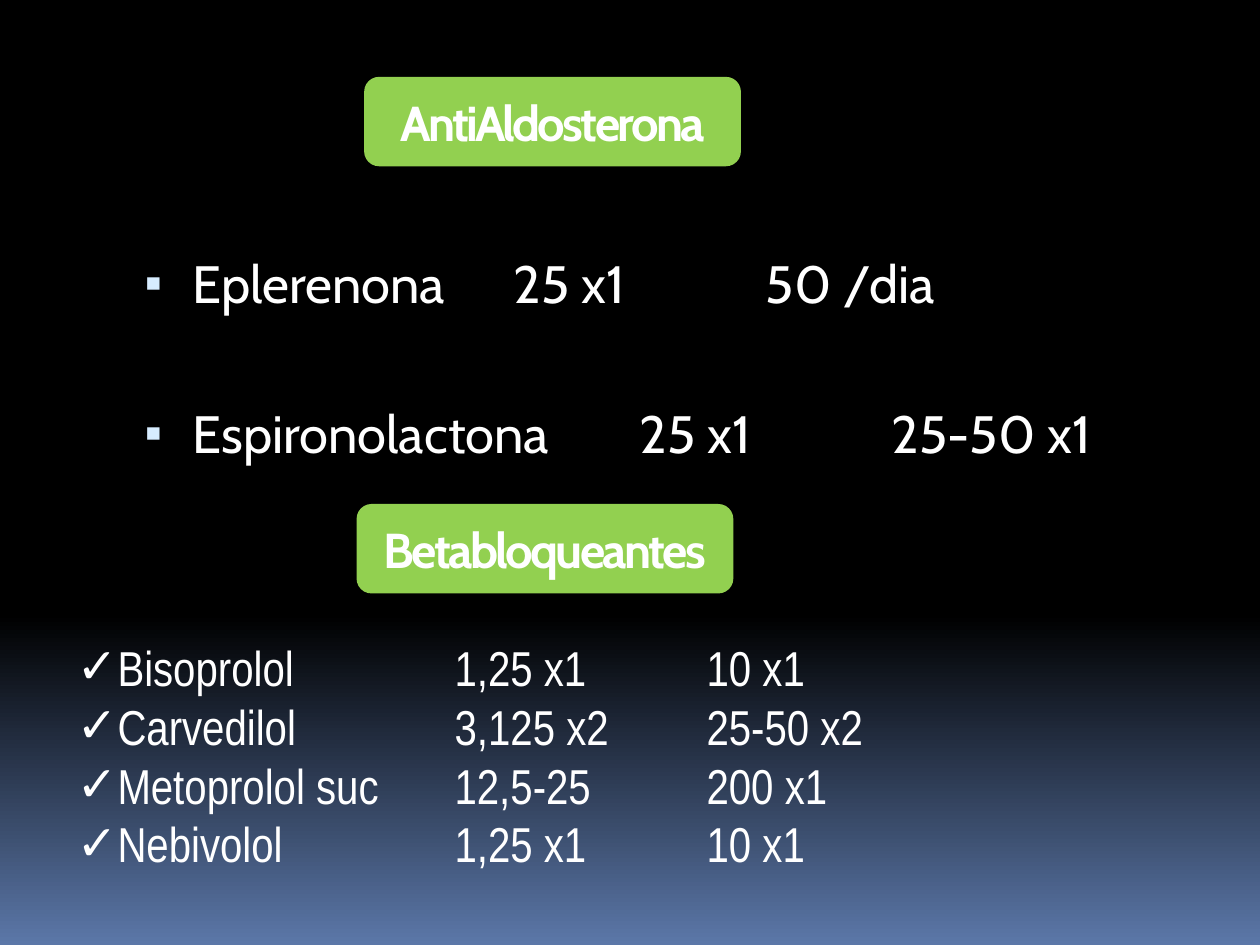
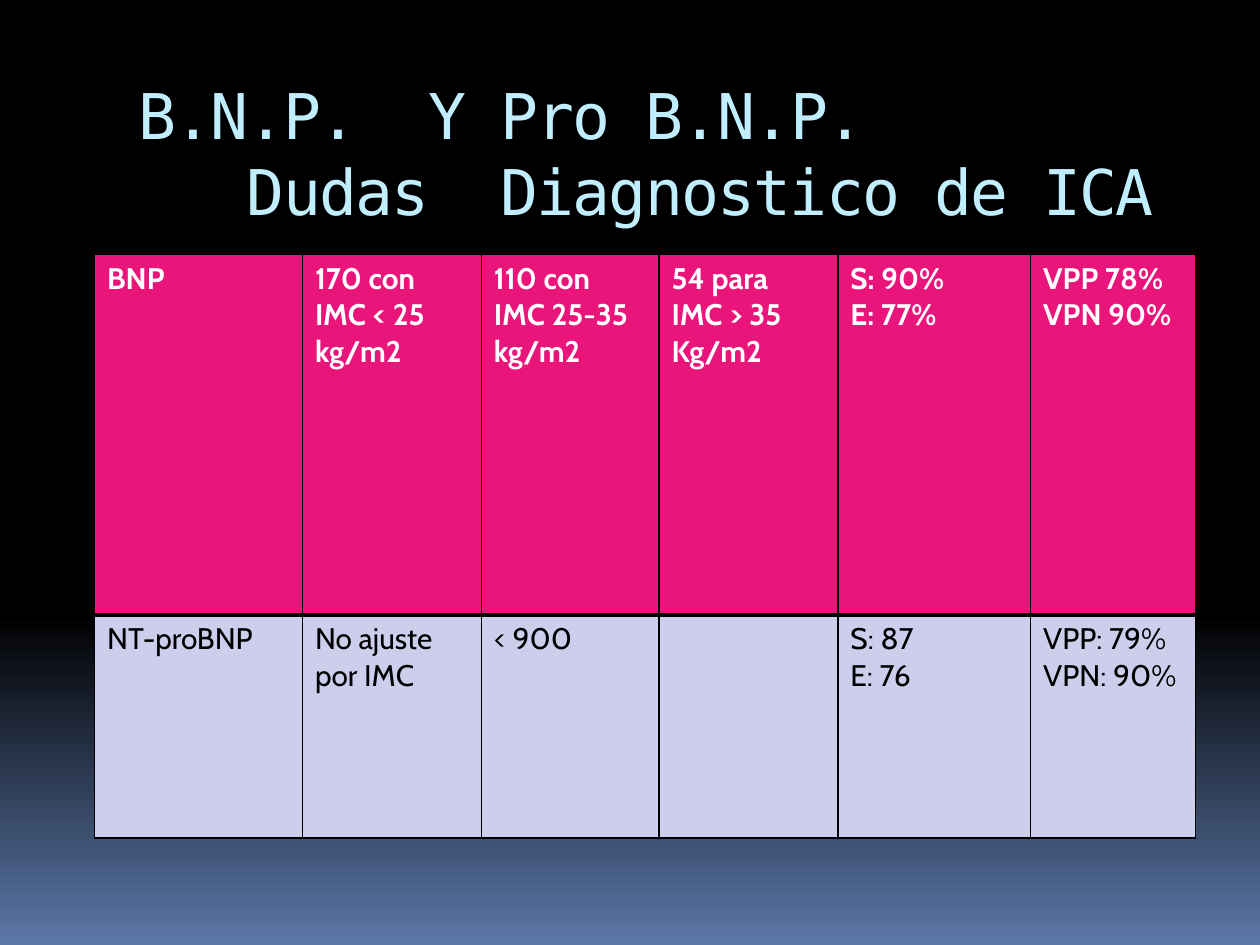
from pptx import Presentation
from pptx.dml.color import RGBColor
from pptx.enum.shapes import MSO_SHAPE
from pptx.enum.text import MSO_ANCHOR, MSO_AUTO_SIZE, PP_ALIGN
from pptx.oxml import parse_xml
from pptx.oxml.ns import nsdecls
from pptx.util import Inches, Pt

ROUNDED = MSO_SHAPE.ROUNDED_RECTANGLE
LEFT, CENTER = PP_ALIGN.LEFT, PP_ALIGN.CENTER
TOP, MIDDLE = MSO_ANCHOR.TOP, MSO_ANCHOR.MIDDLE
NO_FIT = MSO_AUTO_SIZE.NONE


class Theme:
    black = RGBColor(0x00, 0x00, 0x00)
    white = RGBColor(0xFF, 0xFF, 0xFF)
    dusk_blue = RGBColor(0x5B, 0x77, 0xA8)
    title_blue = RGBColor(0xC1, 0xEE, 0xFF)
    green = RGBColor(0x92, 0xD0, 0x50)
    pink = RGBColor(0xEA, 0x15, 0x7A)
    lilac = RGBColor(0xCD, 0xCD, 0xEC)
    bullet_blue = RGBColor(0xD6, 0xEC, 0xFF)
    body_font, list_font, title_font = "Cabin", "Arial Narrow", "DejaVu Sans Mono"
    bullet_font = "Arial"
    title_size, body_size, label_size, cell_size = 36, 30, 28, 17


def write(frame, lines, size, color=Theme.white, font=Theme.body_font, bold=False,
          align=LEFT, anchor=TOP, spacing=0, bullet=None, bullet_color=None,
          margin=0, hanging=0, before=0, gap=0):
    """Fill a text frame, one paragraph a line; gap is the space between lines."""
    frame.word_wrap = True
    frame.vertical_anchor = anchor
    for index, line in enumerate(lines):
        paragraph = frame.add_paragraph() if index else frame.paragraphs[0]
        paragraph.alignment = align
        paragraph.space_before = Pt(gap if index and gap else before)
        run = paragraph.add_run()
        run.text = line
        run.font.name, run.font.size, run.font.bold = font, Pt(size), bold
        run.font.color.rgb = color
        if spacing:
            run._r.get_or_add_rPr().set("spc", str(int(spacing * 100)))
        properties = paragraph._p.get_or_add_pPr()
        properties.set("defTabSz", str(Inches(1)))
        if margin:
            properties.set("marL", str(Inches(margin)))
            properties.set("indent", str(Inches(-hanging)))
        if bullet_color is not None:
            properties.append(parse_xml(
                f'<a:buClr {nsdecls("a")}><a:srgbClr val="{bullet_color}"/></a:buClr>'))
            properties.append(parse_xml(f'<a:buSzPct {nsdecls("a")} val="95000"/>'))
        if bullet:
            properties.append(parse_xml(
                f'<a:buFont {nsdecls("a")} typeface="{Theme.bullet_font}"/>'))
            properties.append(parse_xml(f'<a:buChar {nsdecls("a")} char="{bullet}"/>'))


prs = Presentation()
prs.slide_width, prs.slide_height = Inches(10), Inches(7.5)

# Shared background: black, fading to blue over the lower third
backdrop = prs.slide_master.background.fill
backdrop.gradient()
backdrop.gradient_angle = 270
for stop, color, position in zip(backdrop.gradient_stops,
                                 (Theme.black, Theme.dusk_blue), (0.65, 1)):
    stop.color.rgb = color
    stop.position = position

# Slide 1: drug doses
doses = prs.slides.add_slide(prs.slide_layouts[6])

# Aldosterone antagonists
antagonists = doses.shapes.add_textbox(Inches(0.98), Inches(1.94), Inches(8.5), Inches(5))
write(antagonists.text_frame,
      ["Eplerenona \t25 x1\t\t50 /dia", "Espironolactona \t25 x1\t\t25-50 x1"],
      Theme.body_size, bullet="▪", bullet_color=Theme.bullet_blue,
      margin=0.45, hanging=0.38, before=7, gap=50)

# Drug family labels
for family, left, top in (("AntiAldosterona", 2.89, 0.61), ("Betabloqueantes", 2.83, 4)):
    label = doses.shapes.add_shape(ROUNDED, Inches(left), Inches(top),
                                   Inches(2.99), Inches(0.71))
    label.shadow.inherit = False
    label.fill.solid()
    label.fill.fore_color.rgb = Theme.green
    label.line.fill.background()
    write(label.text_frame, [family], Theme.label_size, bold=True,
          align=CENTER, anchor=MIDDLE, spacing=-1.5)

# Beta blockers
blockers = doses.shapes.add_textbox(Inches(0.51), Inches(5.01), Inches(8.74), Inches(1.97))
write(blockers.text_frame,
      ["Bisoprolol \t\t1,25 x1\t10 x1", "Carvedilol \t\t3,125 x2\t25-50 x2",
       "Metoprolol suc\t12,5-25\t200 x1", "Nebivolol \t\t1,25 x1\t10 x1"],
      Theme.label_size, font=Theme.list_font, bullet="✓")

# Slide 2: natriuretic peptides
peptides = prs.slides.add_slide(prs.slide_layouts[5])

# Title, second line indented
title = peptides.shapes.title
title.left, title.top, title.width, title.height = (
    Inches(1), Inches(0.56), Inches(8.5), Inches(1))
title.text_frame.auto_size = NO_FIT
write(title.text_frame, ["B.N.P.  Y Pro B.N.P.", "Dudas  Diagnostico de ICA"],
      Theme.title_size, color=Theme.title_blue, font=Theme.title_font, spacing=-1)
second_line = title.text_frame.paragraphs[1]._p.get_or_add_pPr()
second_line.set("marL", str(Inches(0.86)))
second_line.set("indent", "0")

# Cut-off table
column_widths = (1.65, 1.42, 1.41, 1.42, 1.53, 1.31)
marker_rows = (
    # height, fill, text colour, bold, top and bottom border, cells
    (2.86, Theme.pink, Theme.white, True, 1, 3,
     (["BNP"], ["170 con IMC < 25 kg/m2"], ["110 con IMC 25-35 kg/m2"],
      ["54 para IMC > 35", "Kg/m2"], ["S: 90%", "E: 77%"], ["VPP 78%", "VPN 90%"])),
    (1.77, Theme.lilac, Theme.black, False, 3, 1,
     (["NT-proBNP"], ["No ajuste por IMC"], ["< 900"], [],
      ["S: 87", "E: 76"], ["VPP: 79%", "VPN: 90%"])),
)
cutoffs = peptides.shapes.add_table(len(marker_rows), len(column_widths), Inches(0.75),
                                    Inches(2.02), Inches(8.74), Inches(4.63)).table
for column, width in zip(cutoffs.columns, column_widths):
    column.width = Inches(width)
for row, (height, fill, color, bold, above, below, texts) in zip(cutoffs.rows, marker_rows):
    row.height = Inches(height)
    for cell, lines in zip(row.cells, texts):
        borders = cell._tc.get_or_add_tcPr()
        for side, weight in (("L", 1), ("R", 1), ("T", above), ("B", below)):
            borders.append(parse_xml(
                f'<a:ln{side} {nsdecls("a")} w="{Pt(weight)}"><a:solidFill>'
                f'<a:srgbClr val="{Theme.black}"/></a:solidFill></a:ln{side}>'))
        cell.fill.solid()
        cell.fill.fore_color.rgb = fill
        write(cell.text_frame, lines, Theme.cell_size, color=color, bold=bold)

prs.save("out.pptx")
